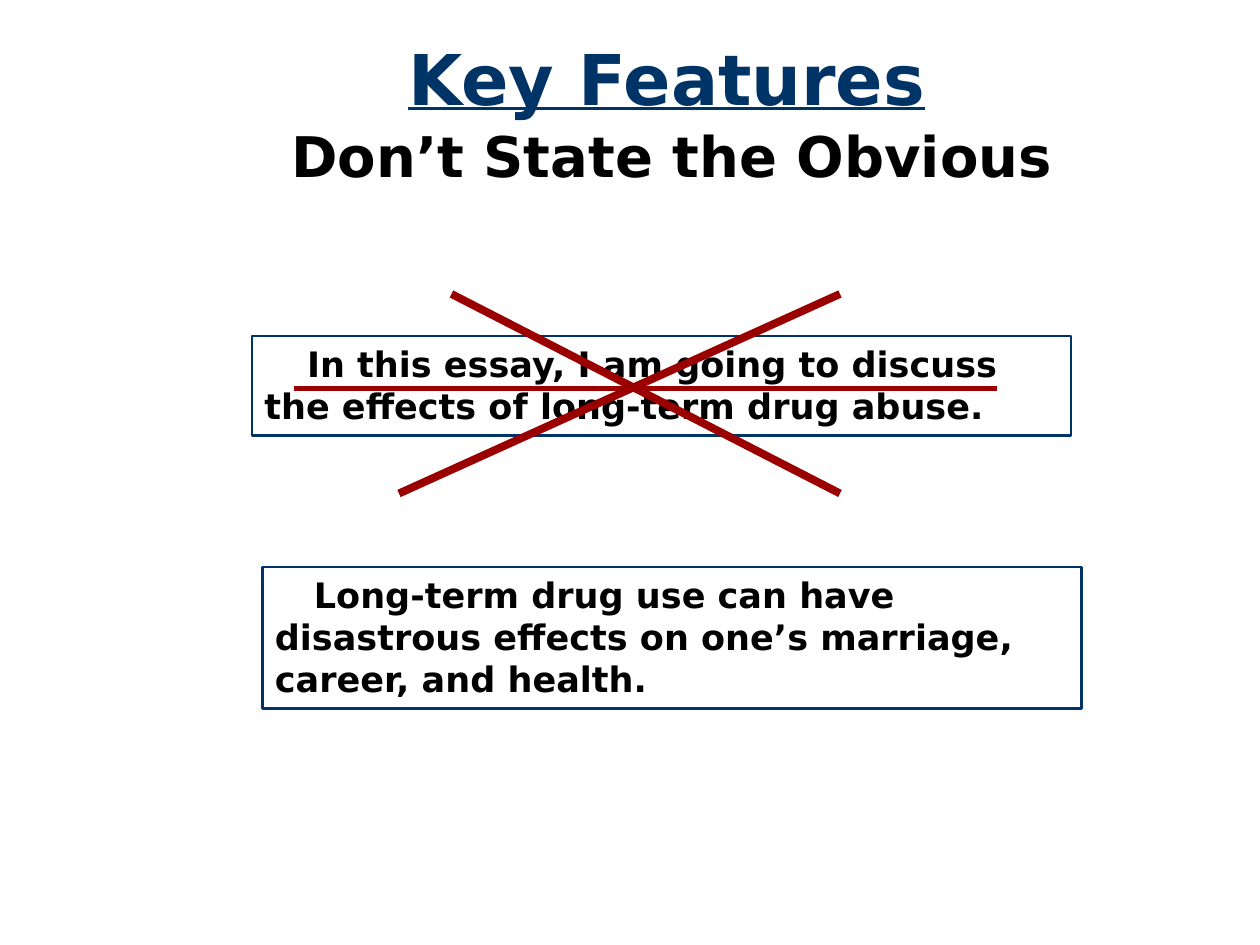
from pptx import Presentation
from pptx.dml.color import RGBColor
from pptx.enum.shapes import MSO_CONNECTOR as Link, MSO_SHAPE as Shape
from pptx.enum.text import MSO_ANCHOR as Anchor, MSO_AUTO_SIZE as Fit, PP_ALIGN as Align
from pptx.oxml.ns import qn
from pptx.util import Pt
from lxml import etree

NAVY, BLACK, WHITE, RED = "003366", "000000", "FFFFFF", "9A0000"


def color(code):
    return RGBColor.from_string(code)


class Deck:
    face = "DejaVu Sans"

    def __init__(self, width, height):
        self.prs = Presentation()
        self.prs.slide_width, self.prs.slide_height = Pt(width), Pt(height)
        self.slide = self.prs.slides.add_slide(self.prs.slide_layouts[6])

    def label(self, shape, text, size, ink, align, anchor):
        frame = shape.text_frame
        frame.word_wrap = True
        frame.auto_size = Fit.SHAPE_TO_FIT_TEXT
        frame.vertical_anchor = anchor
        para = frame.paragraphs[0]
        para.text, para.alignment = text, align
        font = para.font
        font.name, font.size, font.bold = self.face, Pt(size), True
        font.color.rgb = color(ink)
        return para

    def heading(self, box, text, size, ink, anchor=Anchor.TOP):
        shape = self.slide.shapes.add_textbox(*map(Pt, box))
        return self.label(shape, text, size, ink, Align.CENTER, anchor)

    def sample(self, box, text, indent):
        """Add a framed sample sentence with its first line indented."""
        shape = self.slide.shapes.add_shape(Shape.RECTANGLE, *map(Pt, box))
        shape.shadow.inherit = False
        shape.fill.solid()
        shape.fill.fore_color.rgb = color(WHITE)
        shape.line.color.rgb = color(NAVY)
        shape.line.width = Pt(1.5)
        para = self.label(shape, text, 20, BLACK, Align.LEFT, Anchor.TOP)
        props = para._p.get_or_add_pPr()
        props.set("marL", "0")
        props.set("indent", str(Pt(indent)))

    def stroke(self, start, end, width, group=None):
        home = group or self.slide
        line = home.shapes.add_connector(Link.STRAIGHT, *map(Pt, start + end))
        line.line.color.rgb = color(RED)
        line.line.width = Pt(width)
        etree.SubElement(line._element.spPr, qn("a:effectLst"))

    def cross(self, top, low, left, right, width):
        """Group two strokes; left holds the falling and rising stroke's x."""
        group = self.slide.shapes.add_group_shape()
        fall, rise = left
        self.stroke((fall, top), (right, low), width, group)
        self.stroke((rise, low), (right, top), width, group)


def main():
    deck = Deck(720, 540)
    title = deck.heading((48, 16.5, 666, 55.5), "Key Features", 40, NAVY, Anchor.BOTTOM)
    title.font.underline = True
    deck.heading((102, 66, 564, 45.5), "Don’t State the Obvious", 32, BLACK)
    deck.sample((144, 192, 468, 57),
                "In this essay, I am going to discuss the effects of "
                "long-term drug abuse.", 24.4)
    deck.sample((150, 324, 468, 81),
                "Long-term drug use can have disastrous effects on one’s "
                "marriage, career, and health.", 22.3)
    deck.cross(168, 282, (258, 228), 480, 4.5)
    deck.stroke((168, 222), (570, 222), 3)
    deck.prs.save("out.pptx")


if __name__ == "__main__":
    main()
